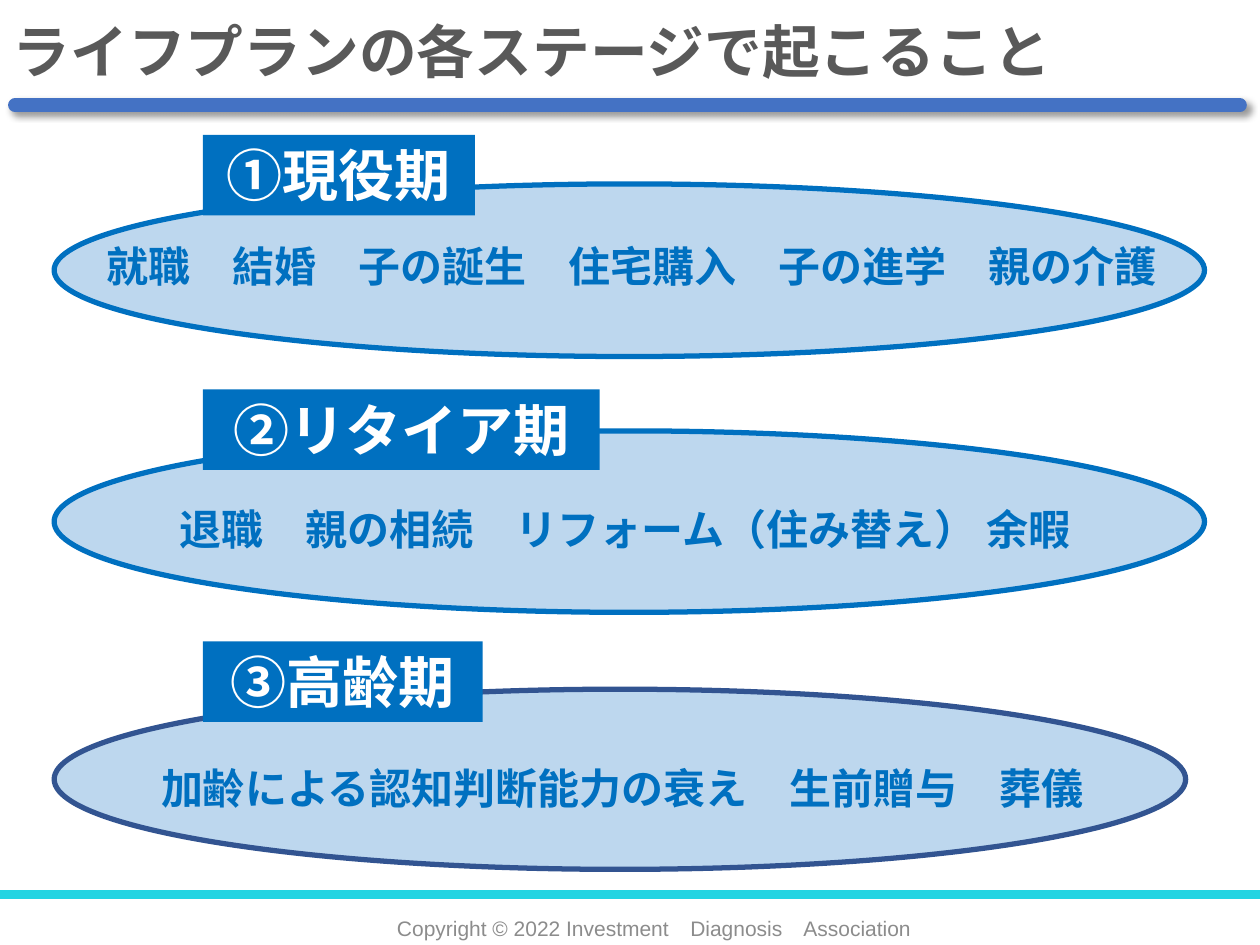
from lxml.etree import SubElement
from pptx import Presentation
from pptx.dml.color import RGBColor
from pptx.enum.shapes import MSO_CONNECTOR, MSO_SHAPE
from pptx.enum.text import MSO_ANCHOR, PP_ALIGN
from pptx.oxml.ns import qn
from pptx.util import Inches, Pt

WHITE = RGBColor(0xFF, 0xFF, 0xFF)
BLACK = RGBColor(0x00, 0x00, 0x00)
GREY = RGBColor(0x59, 0x59, 0x59)
PALE = RGBColor(0x8C, 0x8C, 0x8C)
BLUE = RGBColor(0x00, 0x70, 0xC0)
NAVY = RGBColor(0x32, 0x54, 0x91)
SKY = RGBColor(0xBD, 0xD7, 0xEE)
ROYAL = RGBColor(0x44, 0x72, 0xC4)
CYAN = RGBColor(0x22, 0xD4, 0xE2)
GOTHIC = "Noto Sans CJK JP"
WIDTH, HEIGHT = Inches(10), Inches(7.5)
COL, ROW = WIDTH / 100, HEIGHT / 75


def grid(x, y, w, h):
    return [int(v) for v in (x * COL, y * ROW, w * COL, h * ROW)]


def write(shape, text, size, color, font=GOTHIC, bold=True,
          align=PP_ALIGN.LEFT, anchor=MSO_ANCHOR.TOP, wrap=True, space=None):
    frame = shape.text_frame
    frame.word_wrap = wrap
    frame.vertical_anchor = anchor
    para = frame.paragraphs[0]
    para.alignment = align
    para.line_spacing = space
    run = para.add_run()
    run.text = text
    run.font.size = Pt(size)
    run.font.bold = bold
    run.font.name = font
    run.font.color.rgb = color
    SubElement(run.font._element, qn("a:ea"), typeface=font)


def block(slide, kind, box, fill, edge=None):
    shape = slide.shapes.add_shape(kind, *grid(*box))
    shape.shadow.inherit = False
    shape.fill.solid()
    shape.fill.fore_color.rgb = fill
    if edge is None:
        shape.line.fill.background()
    else:
        shape.line.color.rgb = edge
        shape.line.width = Pt(3)
    return shape


def rule(slide, left, right, top, color, width):
    x, y, w, _ = grid(left, top, right - left, 0)
    line = slide.shapes.add_connector(MSO_CONNECTOR.STRAIGHT, x, y, x + w, y)
    line.line.color.rgb = color
    line.line.width = Pt(width)
    return line, SubElement(line._element.spPr, qn("a:effectLst"))


def head(slide, box, text):
    x, y, w, h = box
    title = slide.shapes.title
    title.left, title.top, title.width, title.height = grid(*box)
    write(title, text, 33, GREY, anchor=MSO_ANCHOR.MIDDLE, space=0.9)
    line, effects = rule(slide, x + 1.2, x + w + 4.4, y + 10.25, ROYAL, 8)
    line.line._get_or_add_ln().set("cap", "rnd")
    shade = SubElement(effects, qn("a:outerShdw"), blurRad=str(Pt(4)),
                       dist=str(Pt(3)), dir="2700000", algn="tl", rotWithShape="0")
    tint = SubElement(shade, qn("a:srgbClr"), val=str(BLACK))
    SubElement(tint, qn("a:alpha"), val="40000")


def stage(slide, box, name, wide, rise, events, inset, drop, span, edge=BLUE):
    x, y, _, _ = box
    block(slide, MSO_SHAPE.OVAL, box, SKY, edge)
    body = slide.shapes.add_textbox(*grid(x + inset, y + drop, span, 5))
    write(body, events, 24, BLUE)
    tag = block(slide, MSO_SHAPE.RECTANGLE, (x + 11.8, y - rise, wide, 6.4), BLUE)
    write(tag, name, 32, WHITE, align=PP_ALIGN.CENTER, wrap=False)


def foot(slide, box, text):
    rule(slide, 0, 100, box[1] - 1.8, CYAN, 5)
    note = slide.shapes.add_textbox(*grid(*box))
    write(note, text, 12, PALE, font="Arial", bold=False,
          align=PP_ALIGN.CENTER, anchor=MSO_ANCHOR.MIDDLE)


def main():
    deck = Presentation()
    deck.slide_width, deck.slide_height = WIDTH, HEIGHT
    slide = deck.slides.add_slide(deck.slide_layouts[5])
    foot(slide, (25.5, 72.8, 52.8, 1.7),
         "Copyright © 2022 Investment　Diagnosis　Association")
    stage(slide, (4.3, 54.7, 89.8, 14.3), "③高齢期", 22.2, 3.8,
          "加齢による認知判断能力の衰え　生前贈与　葬儀", 7.5, 5.3, 76.4, NAVY)
    stage(slide, (4.3, 34.2, 91.3, 14.4), "②リタイア期", 31.5, 3.3,
          "退職　親の相続　リフォーム（住み替え） 余暇", 9, 5.3, 73.4)
    stage(slide, (4.3, 14.6, 91.3, 13.7), "①現役期", 21.6, 3.9,
          "就職　結婚　子の誕生　住宅購入　子の進学　親の介護", 3.2, 4, 85.8)
    head(slide, (0, -1.9, 94, 12.5), "ライフプランの各ステージで起こること")
    deck.save("out.pptx")


if __name__ == "__main__":
    main()
